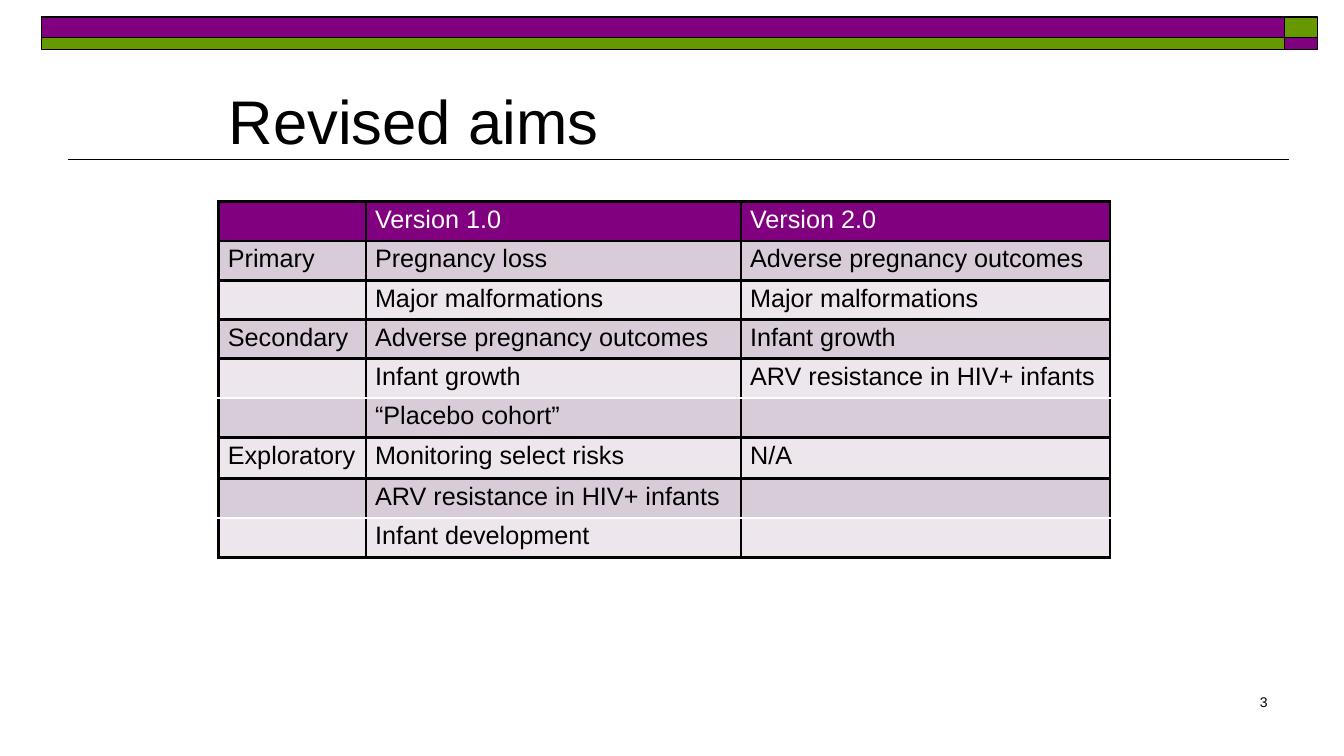
from dataclasses import dataclass

from lxml.etree import SubElement
from pptx import Presentation
from pptx.dml.color import RGBColor
from pptx.enum.shapes import MSO_CONNECTOR, MSO_SHAPE
from pptx.enum.text import MSO_ANCHOR, PP_ALIGN
from pptx.oxml import parse_xml
from pptx.oxml.ns import nsdecls, qn
from pptx.util import Inches, Pt


@dataclass(frozen=True)
class Theme:
    font: str = "Arial"
    black: str = "000000"
    white: str = "FFFFFF"
    purple: str = "800080"
    green: str = "669900"
    odd_row: str = "D8CCD8"
    even_row: str = "EDE7ED"
    title_size: int = 44
    table_size: int = 18
    number_size: int = 10
    thin_line: float = 1
    table_line: float = 2.25


THEME = Theme()

AIMS = [
    ("", "Version 1.0", "Version 2.0"),
    ("Primary", "Pregnancy loss", "Adverse pregnancy outcomes"),
    ("", "Major malformations", "Major malformations"),
    ("Secondary", "Adverse pregnancy outcomes", "Infant growth"),
    ("", "Infant growth", "ARV resistance in HIV+ infants"),
    ("", "“Placebo cohort”", ""),
    ("Exploratory", "Monitoring select risks", "N/A"),
    ("", "ARV resistance in HIV+ infants", ""),
    ("", "Infant development", ""),
]
COLUMN_WIDTHS = [1.46, 3.72, 3.66]
ROW_HEIGHTS = [0.39] * 6 + [0.41] + [0.39] * 2
# Row boundaries drawn as thin white lines, counted from the table top
WHITE_BOUNDARIES = {5, 8}


def add_run(paragraph, text, size, color):
    run = paragraph.add_run()
    run.text = text
    run.font.name = THEME.font
    run.font.size = Pt(size)
    run.font.bold = False
    run.font.color.rgb = RGBColor.from_string(color)


def add_text(slide, bounds, text, size, anchor, alignment):
    shape = slide.shapes.add_textbox(*map(Inches, bounds))
    frame = shape.text_frame
    frame.word_wrap = True
    frame.vertical_anchor = anchor
    paragraph = frame.paragraphs[0]
    paragraph.alignment = alignment
    add_run(paragraph, text, size, THEME.black)


def add_bar(slide, left, top, width, height, color):
    shape = slide.shapes.add_shape(
        MSO_SHAPE.RECTANGLE, Inches(left), Inches(top), Inches(width), Inches(height))
    shape.shadow.inherit = False
    shape.fill.solid()
    shape.fill.fore_color.rgb = RGBColor.from_string(color)
    shape.line.color.rgb = RGBColor.from_string(THEME.black)
    shape.line.width = Pt(THEME.thin_line)


def add_banner(slide):
    top_colors = (THEME.purple, THEME.green)
    for left, width, colors in ((0.41, 12.33, top_colors), (12.74, 0.33, top_colors[::-1])):
        for top, height, color in zip((0.17, 0.37), (0.2, 0.12), colors):
            add_bar(slide, left, top, width, height, color)


def add_rule(slide, left, right, y):
    connector = slide.shapes.add_connector(
        MSO_CONNECTOR.STRAIGHT, Inches(right), Inches(y), Inches(left), Inches(y))
    connector.line.color.rgb = RGBColor.from_string(THEME.black)
    connector.line.width = Pt(THEME.thin_line)
    SubElement(connector.element.spPr, qn("a:effectLst"))


def set_borders(cell, row_index):
    properties = cell._tc.get_or_add_tcPr()
    boundaries = {"L": None, "R": None, "T": row_index, "B": row_index + 1}
    for position, (side, boundary) in enumerate(boundaries.items()):
        is_white = boundary in WHITE_BOUNDARIES
        color = THEME.white if is_white else THEME.black
        width = Pt(THEME.thin_line if is_white else THEME.table_line)
        properties.insert(position, parse_xml(
            f'<a:ln{side} {nsdecls("a")} w="{width}"><a:solidFill>'
            f'<a:srgbClr val="{color}"/></a:solidFill></a:ln{side}>'))


def fill_cell(cell, text, row_index):
    is_header = row_index == 0
    band = THEME.odd_row if row_index % 2 else THEME.even_row
    cell.fill.solid()
    cell.fill.fore_color.rgb = RGBColor.from_string(THEME.purple if is_header else band)
    cell.margin_left = cell.margin_right = Inches(0.09)
    cell.margin_top = cell.margin_bottom = Inches(0.04)
    if text:
        color = THEME.white if is_header else THEME.black
        add_run(cell.text_frame.paragraphs[0], text, THEME.table_size, color)
    set_borders(cell, row_index)


def add_aims_table(slide, left, top):
    table = slide.shapes.add_table(
        len(AIMS), len(COLUMN_WIDTHS), Inches(left), Inches(top),
        Inches(sum(COLUMN_WIDTHS)), Inches(sum(ROW_HEIGHTS))).table
    table.horz_banding = False
    for column, width in zip(table.columns, COLUMN_WIDTHS):
        column.width = Inches(width)
    for row_index, (row, height) in enumerate(zip(table.rows, ROW_HEIGHTS)):
        row.height = Inches(height)
        for cell, text in zip(row.cells, AIMS[row_index]):
            fill_cell(cell, text, row_index)


def main():
    presentation = Presentation()
    presentation.slide_width = Inches(13.33)
    presentation.slide_height = Inches(7.5)
    slide = presentation.slides.add_slide(presentation.slide_layouts[6])

    # Banner and title
    add_rule(slide, 0.67, 12.78, 1.58)
    add_banner(slide)
    add_text(slide, (2.17, 0.58, 9, 1.03), "Revised aims",
             THEME.title_size, MSO_ANCHOR.BOTTOM, PP_ALIGN.LEFT)

    # Comparison of the aims
    add_aims_table(slide, 2.17, 2)

    # Slide number
    add_text(slide, (9.89, 6.83, 2.78, 0.5), "3",
             THEME.number_size, MSO_ANCHOR.TOP, PP_ALIGN.RIGHT)

    presentation.save("out.pptx")


if __name__ == "__main__":
    main()
